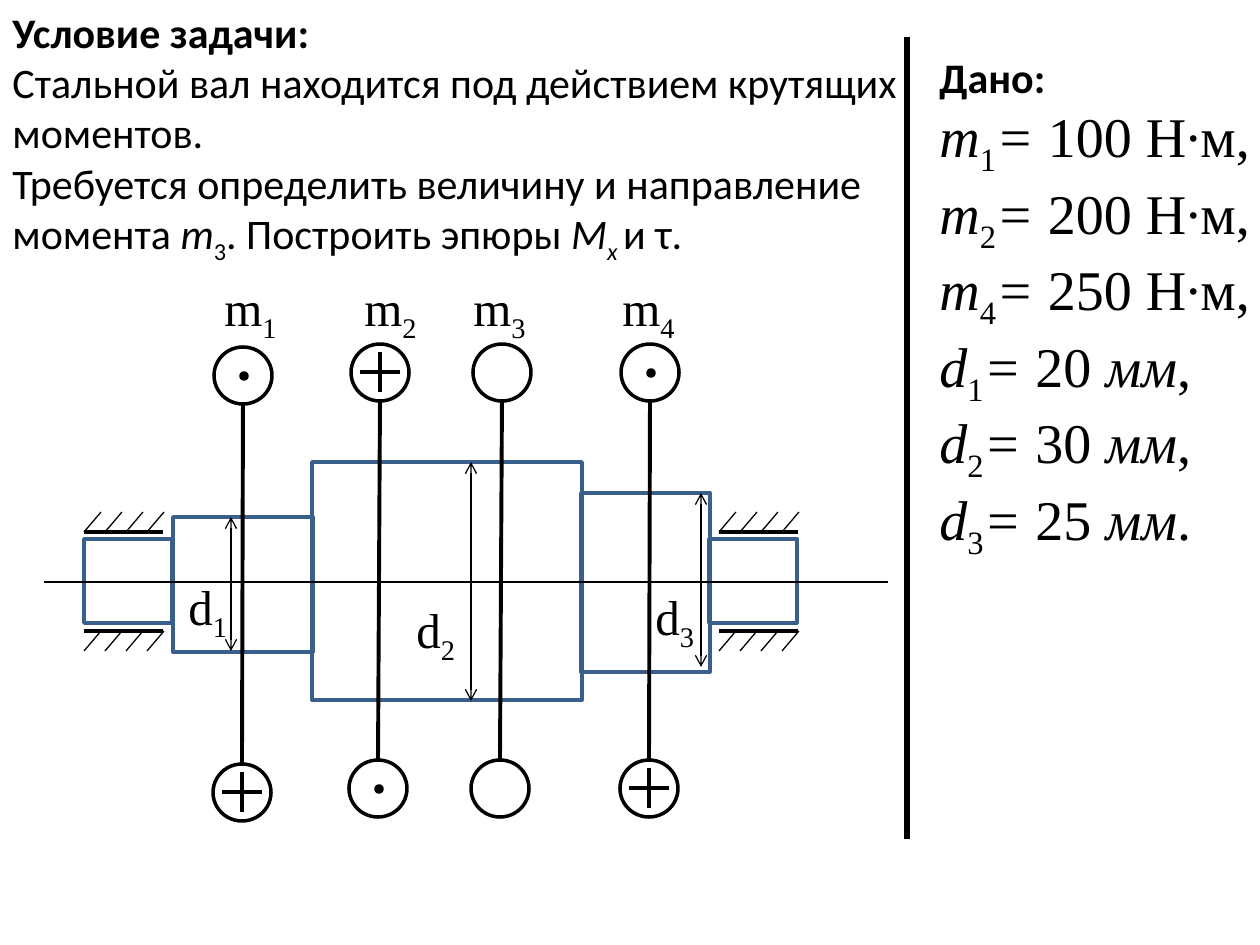
from lxml.etree import SubElement as Sub
from pptx import Presentation
from pptx.dml.color import RGBColor as Rgb
from pptx.enum.shapes import MSO_CONNECTOR as Conn, MSO_SHAPE as Kind
from pptx.enum.text import MSO_AUTO_SIZE as Fit
from pptx.oxml.ns import qn
from pptx.util import Pt

HUES = {"ink": "000000", "paper": "FFFFFF", "steel": "3A5F8C"}
SANS, SERIF = "Calibri", "Times New Roman"

TASK = [
    [("Условие задачи:", "b")],
    [("Стальной вал находится под действием крутящих моментов.", "")],
    [("Требуется определить величину и направление момента ", ""),
     ("m", "i"), ("3", "s"), (". Построить эпюры ", ""),
     ("M", "i"), ("x ", "is"), ("и τ.", "")],
]
LOADS = [("1", "100"), ("2", "200"), ("4", "250")]
SIZES = [("1", "20", ","), ("2", "30", ","), ("3", "25", ".")]

STEPS = [(173, 517, 140, 135), (312, 462, 270, 238), (581, 493, 129, 179),
         (709, 539, 88, 84), (84, 539, 88, 84)]
SPANS = [(231, 517, 651), (471, 462, 701), (701, 493, 667)]
MARKS = [("d", "1", 176, 570), ("d", "2", 404, 593), ("d", "3", 643, 580),
         ("m", "1", 212, 271), ("m", "2", 352, 271),
         ("m", "3", 461, 271), ("m", "4", 610, 271)]
MOMENTS = [((243, 375, "dot"), (242, 792, "plus")),
           ((380, 372, "plus"), (378, 788, "dot")),
           ((502, 372, ""), (500, 788, "")),
           ((650, 372, "dot"), (649, 788, "plus"))]
WALLS = [84, 719]

SCALE = 914400 / 126
deck = Presentation()
deck.slide_width, deck.slide_height = 9144000, 6858000
slide = deck.slides.add_slide(deck.slide_layouts[6])


def px(*vals):
    return [round(v * SCALE) for v in vals]


def hue(name):
    return Rgb.from_string(HUES[name])


def draw(kind, box, edge="ink", fill=None):
    item = slide.shapes.add_shape(kind, *px(*box))
    item.shadow.inherit = False
    item.line.color.rgb = hue(edge)
    item.line.width = Pt(2)
    if fill:
        item.fill.solid()
        item.fill.fore_color.rgb = hue(fill)
    else:
        item.fill.background()


def rule(x1, y1, x2, y2, width=0.75, heads=False):
    item = slide.shapes.add_connector(Conn.STRAIGHT, *px(x1, y1, x2, y2))
    item.line.color.rgb = hue("ink")
    item.line.width = Pt(width)
    props = item._element.spPr
    Sub(props, qn("a:effectLst"))
    if heads:
        for tag in ("a:headEnd", "a:tailEnd"):
            Sub(props.find(qn("a:ln")), qn(tag), type="arrow")


def write(box, lines, looks, wrap=True):
    frame = slide.shapes.add_textbox(*px(*box)).text_frame
    frame.word_wrap = wrap
    frame.auto_size = Fit.SHAPE_TO_FIT_TEXT
    for k, (line, (face, size)) in enumerate(zip(lines, looks)):
        para = frame.paragraphs[0] if k == 0 else frame.add_paragraph()
        for text, style in line:
            run = para.add_run()
            run.text = text
            font = run.font
            font.name, font.size = face, Pt(size)
            font.color.rgb = hue("ink")
            font.bold, font.italic = "b" in style, "i" in style
            if "s" in style:
                font._element.set("baseline", "-25000")


def disc(x, y, sign):
    draw(Kind.OVAL, (x - 29, y - 28, 58, 57), fill="paper")
    if sign == "dot":
        draw(Kind.OVAL, (x - 2, y - 2, 6, 6), fill="ink")
    elif sign == "plus":
        rule(x - 20, y, x + 20, y, 2.25)
        rule(x, y - 20, x, y + 20, 2.25)


def wall(left, y, top):
    rule(left, y, left + 79, y, 2.25)
    for k in range(4):
        x = left + 21 * k
        rule(x + 17, top, x, top + 20)


for step in STEPS:
    draw(Kind.RECTANGLE, step, "steel")
rule(44, 582, 888, 582)
rule(907, 37, 907, 839, 3)

for left in WALLS:
    wall(left, 532, 512)
    wall(left, 631, 631)
for x, top, base in SPANS:
    rule(x, top, x, base, heads=True)

for high, low in MOMENTS:
    rule(high[0], high[1] + 28, low[0], low[1] - 28, 2.25)
    disc(*high)
    disc(*low)

for name, sub, x, y in MARKS:
    width = 81 if name == "m" else 67
    write((x, y, width, 72), [[(name, ""), (sub, "s")]], [(SERIF, 28)], False)

write((0, 0, 953, 267), TASK, [(SANS, 24)] * len(TASK))

given = [[("Дано:", "b")]]
for sub, val in LOADS:
    given.append([("m", "i"), (sub, "s"), ("= ", "i"), (val + " Н∙м,", "")])
for sub, val, end in SIZES:
    given.append([("d", "i"), (sub, "s"), ("= ", "i"), (val + " ", ""),
                  ("мм", "i"), (end, "")])
write((927, 45, 420, 471), given, [(SANS, 24)] + [(SERIF, 32)] * 6)

deck.save("out.pptx")
